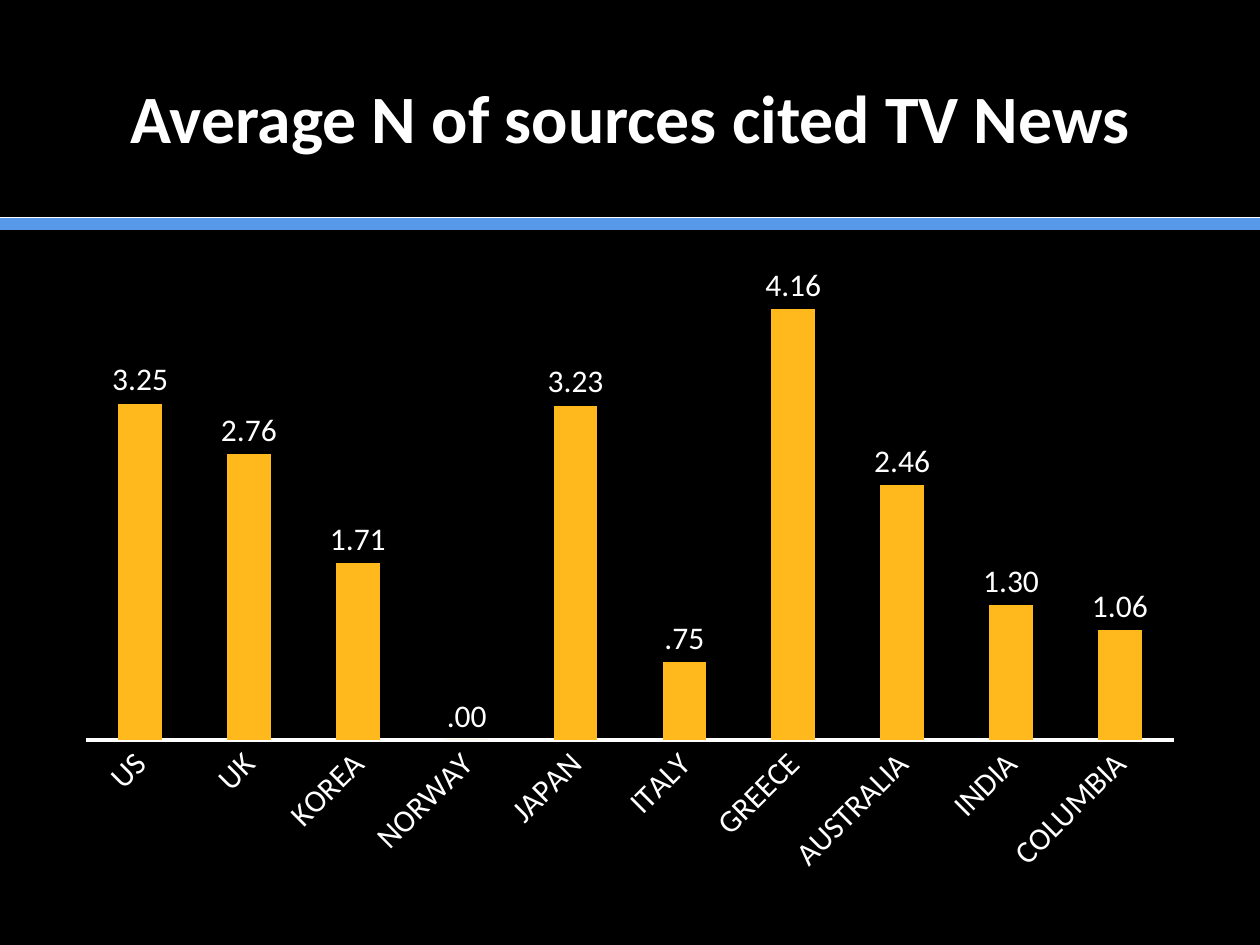
from dataclasses import dataclass

from lxml.etree import SubElement
from pptx import Presentation
from pptx.chart.data import CategoryChartData
from pptx.dml.color import RGBColor
from pptx.enum.chart import XL_CHART_TYPE as ChartType
from pptx.enum.chart import XL_LABEL_POSITION as LabelPosition
from pptx.enum.chart import XL_TICK_MARK as TickMark
from pptx.enum.shapes import MSO_CONNECTOR as Connector
from pptx.enum.text import MSO_ANCHOR as Anchor
from pptx.enum.text import PP_ALIGN as Align
from pptx.oxml.ns import qn
from pptx.slide import Slide
from pptx.util import Cm, Pt

BLACK = RGBColor(0x00, 0x00, 0x00)
WHITE = RGBColor(0xFF, 0xFF, 0xFF)
BLUE = RGBColor(0x57, 0x99, 0xE8)
AMBER = RGBColor(0xFF, 0xB9, 0x1D)
FONT = "Calibri"
NUMBER_FORMAT = "####.00"
SLIDE_WIDTH = Cm(25.4)
MARGIN = Cm(1.27)
CONTENT_WIDTH = SLIDE_WIDTH - 2 * MARGIN

SOURCES_CITED = {
    "US": 3.25,
    "UK": 2.76,
    "KOREA": 1.71,
    "NORWAY": 0,
    "JAPAN": 3.23,
    "ITALY": 0.75,
    "GREECE": 4.16,
    "AUSTRALIA": 2.46,
    "INDIA": 1.3,
    "COLUMBIA": 1.06,
}


@dataclass(frozen=True)
class Rule:
    top: Cm
    width: Pt
    color: RGBColor


RULES = (Rule(Cm(4.52), Pt(7), BLUE), Rule(Cm(4.39), Pt(0.5), WHITE))


def draw_rule(slide: Slide, rule: Rule) -> None:
    connector = slide.shapes.add_connector(
        Connector.STRAIGHT, 0, rule.top, SLIDE_WIDTH, rule.top
    )
    connector.line.color.rgb = rule.color
    connector.line.width = rule.width
    SubElement(connector._element.spPr, qn("a:effectLst"))


def draw_title(slide: Slide, text: str) -> None:
    shape = slide.shapes.add_textbox(MARGIN, Cm(0.76), CONTENT_WIDTH, Cm(3.18))
    frame = shape.text_frame
    frame.word_wrap = True
    frame.vertical_anchor = Anchor.MIDDLE
    paragraph = frame.paragraphs[0]
    paragraph.text = text
    paragraph.alignment = Align.CENTER
    font = paragraph.font
    font.name, font.size, font.bold = FONT, Pt(38.7), True
    font.color.rgb = WHITE


def draw_chart(slide: Slide, values: dict[str, float]) -> None:
    data = CategoryChartData(number_format=NUMBER_FORMAT)
    data.categories = list(values)
    data.add_series("Series 1", list(values.values()))
    chart = slide.shapes.add_chart(
        ChartType.COLUMN_CLUSTERED, MARGIN, Cm(5.28), CONTENT_WIDTH, Cm(12.57), data
    ).chart
    chart.has_legend = False
    chart.has_title = False
    chart.font.name, chart.font.size = FONT, Pt(18)
    chart.font.color.rgb = WHITE

    category_axis = chart.category_axis
    category_axis.major_tick_mark = TickMark.NONE
    category_axis.format.line.color.rgb = WHITE
    category_axis.format.line.width = Pt(2.25)
    category_axis.tick_labels.font.size = Pt(18)
    category_axis._element.txPr.bodyPr.set("rot", "-2700000")

    value_axis = chart.value_axis
    value_axis.minimum_scale, value_axis.maximum_scale = 0, 4.5
    value_axis.has_major_gridlines = False
    value_axis.tick_labels.number_format = NUMBER_FORMAT
    value_axis.tick_labels.number_format_is_linked = False
    value_axis.visible = False

    plot = chart.plots[0]
    plot.gap_width, plot.overlap = 150, -25
    plot.vary_by_categories = False
    fill = plot.series[0].format.fill
    fill.solid()
    fill.fore_color.rgb = AMBER

    labels = plot.series[0].data_labels
    labels.show_value = True
    labels.position = LabelPosition.OUTSIDE_END
    labels.number_format = NUMBER_FORMAT
    labels.number_format_is_linked = False


def main() -> None:
    """Build the slide on sources cited in TV news."""
    presentation = Presentation()
    presentation.slide_width, presentation.slide_height = SLIDE_WIDTH, Cm(19.05)
    slide = presentation.slides.add_slide(presentation.slide_layouts[6])
    slide.background.fill.solid()
    slide.background.fill.fore_color.rgb = BLACK
    for rule in RULES:
        draw_rule(slide, rule)
    draw_title(slide, "Average N of sources cited TV News")
    draw_chart(slide, SOURCES_CITED)
    presentation.save("out.pptx")


if __name__ == "__main__":
    main()
